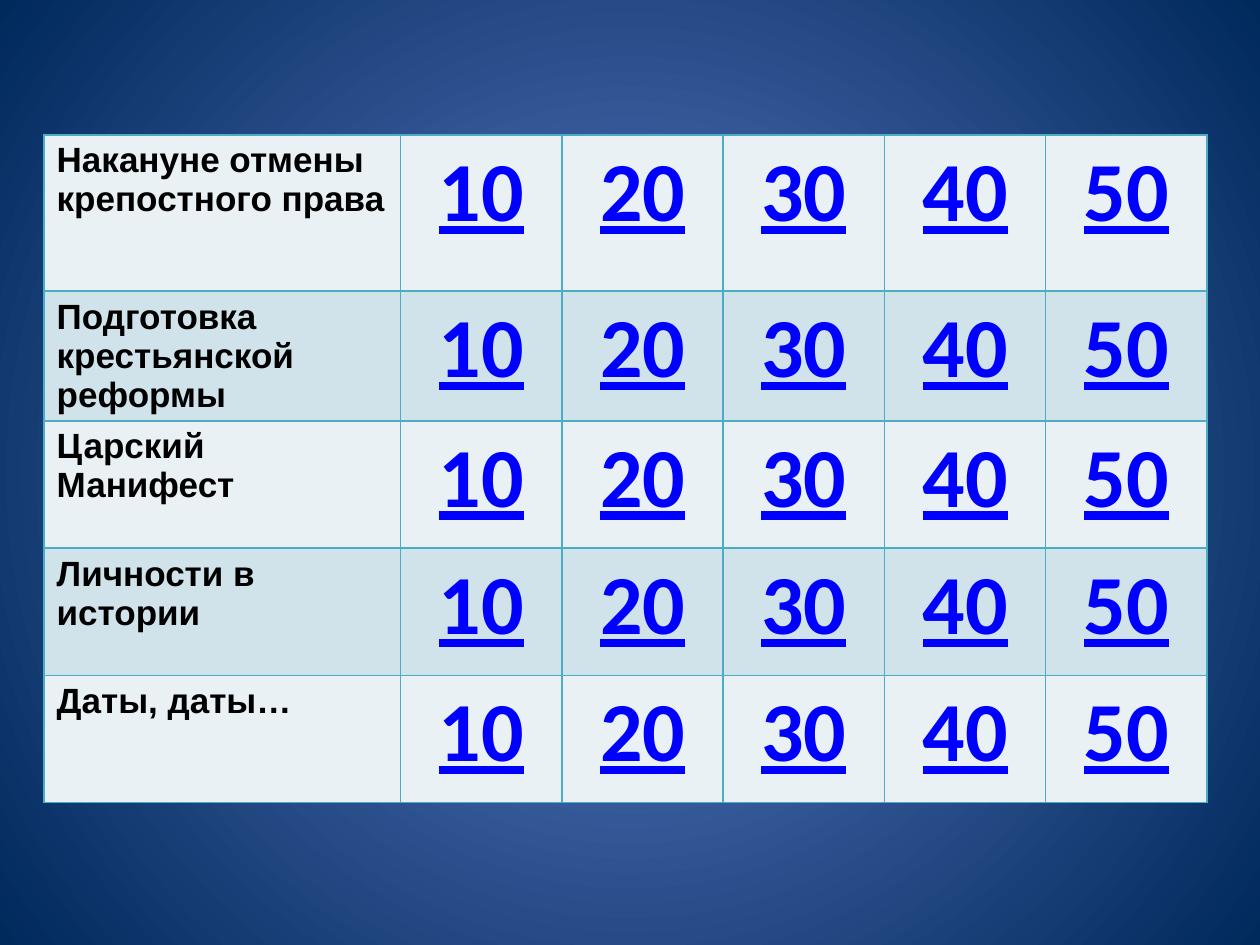
import dataclasses

import lxml.etree
import pptx
import pptx.dml.color
import pptx.enum.text
import pptx.oxml.ns
import pptx.util

Inches = pptx.util.Inches
qn = pptx.oxml.ns.qn

TOPICS = [
    "Накануне отмены крепостного права",
    "Подготовка крестьянской реформы",
    "Царский Манифест",
    "Личности в истории",
    "Даты, даты…",
]
POINTS = [10, 20, 30, 40, 50]
BAND_FILLS = ["E9F1F5", "D0E3EA"]
BORDER = "4BACC6"
BACKGROUND_STOPS = ["5E7CC5", "00295C"]


@dataclasses.dataclass
class CellStyle:
    font: dict
    color: str
    alignment: pptx.enum.text.PP_ALIGN


TOPIC_STYLE = CellStyle(
    {"name": "Arial", "size": pptx.util.Pt(20), "bold": True, "underline": False},
    "000000", pptx.enum.text.PP_ALIGN.LEFT)
POINTS_STYLE = CellStyle(
    {"name": "Calibri", "size": pptx.util.Pt(48), "bold": True, "underline": True},
    "0000FF", pptx.enum.text.PP_ALIGN.CENTER)


def rgb(color: str) -> pptx.dml.color.RGBColor:
    return pptx.dml.color.RGBColor.from_string(color)


def paint_background(page) -> None:
    fill = page.background.fill
    fill.gradient()
    for stop, color, position in zip(fill.gradient_stops, BACKGROUND_STOPS, (0, 1)):
        stop.color.rgb = rgb(color)
        stop.position = position
    # Turn the linear gradient into a circle around the page centre
    gradient = page.element.find(".//" + qn("a:gradFill"))
    gradient.remove(gradient.find(qn("a:lin")))
    circle = lxml.etree.SubElement(gradient, qn("a:path"), {"path": "circle"})
    lxml.etree.SubElement(circle, qn("a:fillToRect"), dict.fromkeys("ltrb", "50000"))


def add_borders(cell) -> None:
    properties = cell._tc.get_or_add_tcPr()
    for index, side in enumerate(("lnL", "lnR", "lnT", "lnB")):
        line = lxml.etree.Element(qn("a:" + side), {"w": str(pptx.util.Pt(1))})
        solid = lxml.etree.SubElement(line, qn("a:solidFill"))
        lxml.etree.SubElement(solid, qn("a:srgbClr"), {"val": BORDER})
        properties.insert(index, line)


def fill_cell(cell, text: str, style: CellStyle, fill: str) -> None:
    cell.fill.solid()
    cell.fill.fore_color.rgb = rgb(fill)
    add_borders(cell)
    para = cell.text_frame.paragraphs[0]
    para.alignment = style.alignment
    span = para.add_run()
    span.text = text
    for name, value in style.font.items():
        setattr(span.font, name, value)
    span.font.color.rgb = rgb(style.color)


def add_board(page) -> None:
    table = page.shapes.add_table(
        len(TOPICS), len(POINTS) + 1,
        Inches(0.35), Inches(1.07), Inches(9.21), Inches(5.28)).table
    for index, column in enumerate(table.columns):
        column.width = Inches(1.28 if index else 2.83)
    for index, row in enumerate(table.rows):
        row.height = Inches(1.01 if index else 1.24)
        fill = BAND_FILLS[index % 2]
        topic, *scores = row.cells
        fill_cell(topic, TOPICS[index], TOPIC_STYLE, fill)
        for cell, points in zip(scores, POINTS):
            fill_cell(cell, str(points), POINTS_STYLE, fill)


def main() -> None:
    deck = pptx.Presentation()
    deck.slide_width, deck.slide_height = Inches(10), Inches(7.5)
    page = deck.slides.add_slide(deck.slide_layouts[6])
    paint_background(page)
    add_board(page)
    deck.save("out.pptx")


if __name__ == "__main__":
    main()
